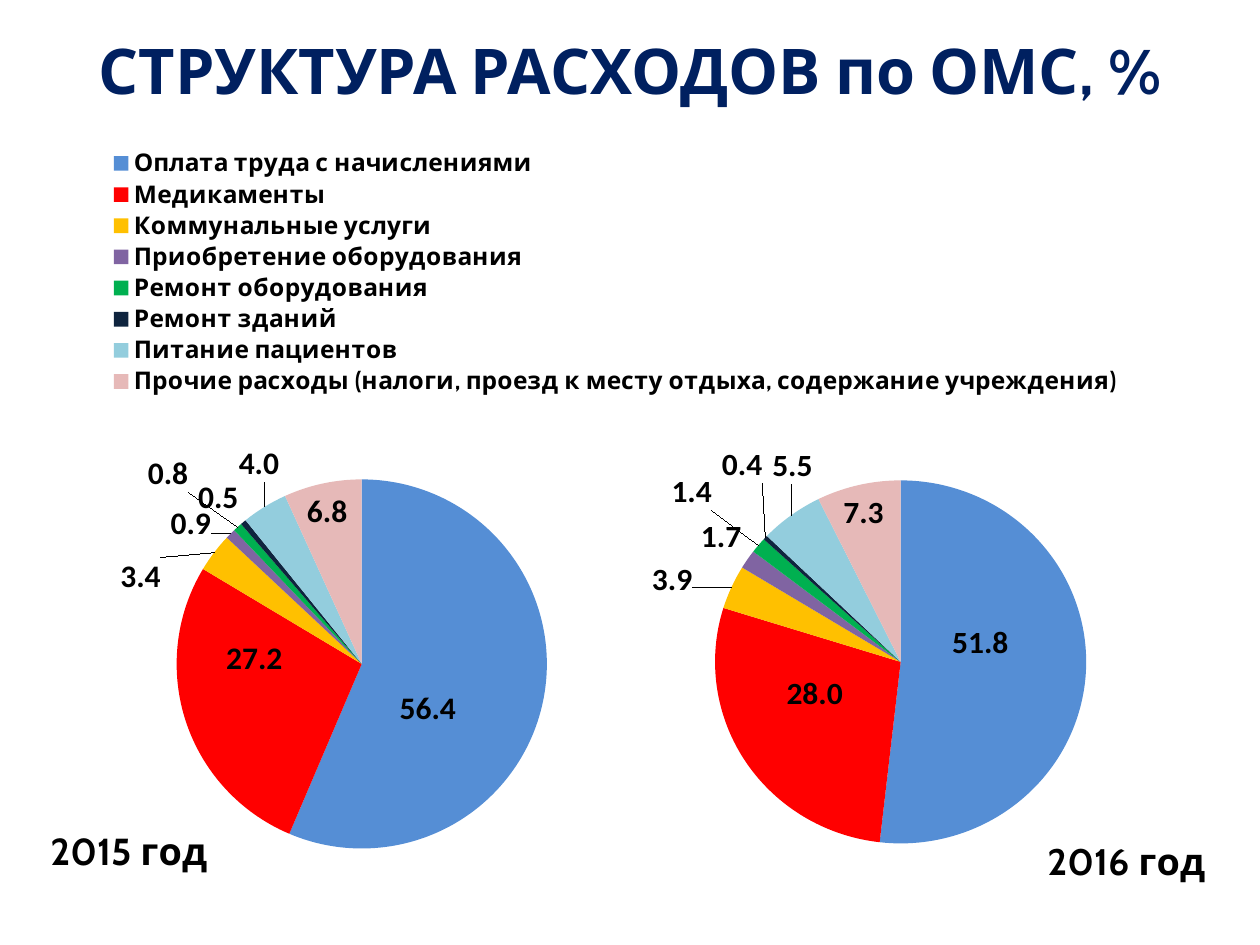
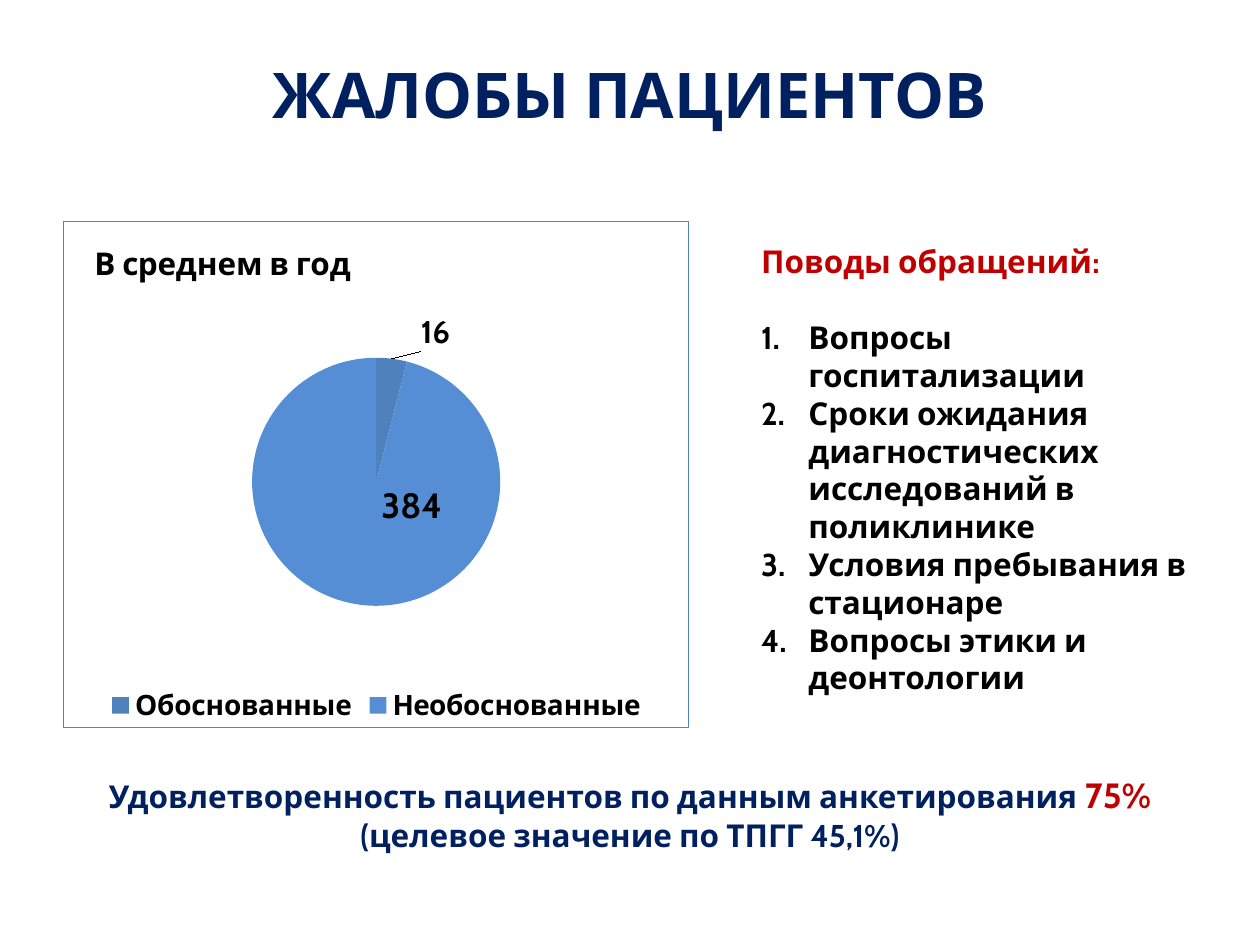
from math import cos, pi, sin

from lxml.etree import SubElement as sub
from pptx import Presentation
from pptx.chart.data import CategoryChartData as Data
from pptx.dml.color import RGBColor
from pptx.enum.chart import XL_CHART_TYPE as Kind
from pptx.enum.chart import XL_LABEL_POSITION as Spot
from pptx.enum.chart import XL_LEGEND_POSITION as Side
from pptx.enum.text import MSO_ANCHOR as Anchor
from pptx.enum.text import MSO_AUTO_SIZE as Fit
from pptx.enum.text import PP_ALIGN as Align
from pptx.oxml import parse_xml
from pptx.oxml.ns import nsdecls, qn
from pptx.util import Pt

FACE = "Cabin"
NAVY, RED, BLACK, BLUE = "002060", "C00000", "000000", "4F81BD"
SLICES = ["558ED5", "FF0000", "FFC000", "8064A2",
          "00B050", "0F243E", "93CDDD", "E6B9B8"]
COSTS = ["Оплата труда с начислениями", "Медикаменты", "Коммунальные услуги",
         "Приобретение оборудования", "Ремонт оборудования", "Ремонт зданий",
         "Питание пациентов",
         "Прочие расходы (налоги, проезд к месту отдыха, содержание учреждения)"]
REASONS = ["Вопросы госпитализации",
           "Сроки ожидания диагностических исследований в поликлинике",
           "Условия пребывания в стационаре",
           "Вопросы этики и деонтологии"]


def hue(code):
    """Turn a hex string into a colour."""
    return RGBColor.from_string(code)


def style(font, size, color=BLACK, face=FACE):
    """Set a bold font."""
    font.name, font.size, font.bold = face, Pt(size), True
    font.color.rgb = hue(color)


def write(para, text, size, color):
    """Add one styled run to a paragraph."""
    run = para.add_run()
    run.text = text
    style(run.font, size, color)


def move(shape, box):
    """Put a shape into a box given in points."""
    shape.left, shape.top, shape.width, shape.height = map(Pt, box)


def head(slide, text, box):
    """Fill and place the slide title."""
    title = slide.shapes.title
    move(title, box)
    frame = title.text_frame
    frame.auto_size, frame.vertical_anchor = Fit.NONE, Anchor.MIDDLE
    para = frame.paragraphs[0]
    para.alignment = Align.CENTER
    write(para, text, 36, NAVY)


def place(node, index, x, y, size=None, inner=False):
    """Give a chart part a manual layout in fractions of the chart."""
    for old in node.findall(qn("c:layout")):
        node.remove(old)
    layout = parse_xml(f"<c:layout {nsdecls('c')}><c:manualLayout/></c:layout>")
    marks = [("layoutTarget", "inner")] if inner else []
    if index == 0 or size or node.tag == qn("c:title"):
        marks += [("xMode", "edge"), ("yMode", "edge")]
    marks += [("x", f"{x:.3f}"), ("y", f"{y:.3f}")]
    if size:
        marks += [("w", str(size[0])), ("h", str(size[1]))]
    for tag, val in marks:
        sub(layout[0], qn("c:" + tag)).set("val", val)
    node.insert(index, layout)


def frame_chart(chart, color):
    """Clear the chart ground and draw its border, if any."""
    line = (f'<a:ln w="9525"><a:solidFill><a:srgbClr val="{color}"/>'
            "</a:solidFill></a:ln>" if color else "<a:ln><a:noFill/></a:ln>")
    look = parse_xml(f"<c:spPr {nsdecls('c', 'a')}><a:noFill/>{line}</c:spPr>")
    chart._chartSpace.find(qn("c:chart")).addnext(look)


def shift(box, plot, vals, index, spot):
    """Find the move from the outer label place to a wanted centre."""
    left, top, wide, high = box
    px, py, pw, ph = plot
    rad = min(pw * wide, ph * high) / 2 + 4
    turn = 2 * pi * (sum(vals[:index]) + vals[index] / 2) / sum(vals)
    dx, dy = sin(turn), -cos(turn)
    half = 16 if vals[index] >= 10 else 11
    x = left + (px + pw / 2) * wide + rad * dx + (half if dx > 0 else -half)
    y = top + (py + ph / 2) * high + rad * dy + (11 if dy > 0 else -11)
    return (spot[0] - x) / wide, (spot[1] - y) / high


def pie(slide, box, cats, vals, fills, plot, title, spots,
        texts=None, border=None):
    """Draw a pie with a placed title and value labels."""
    data = Data(number_format="0.0")
    data.categories = cats
    data.add_series(title[0] if texts else "Series 1", vals)
    chart = slide.shapes.add_chart(Kind.PIE, *map(Pt, box), data).chart
    chart.font.size, chart.font.name = Pt(18), "Calibri"
    chart.font.color.rgb = hue(BLACK)
    frame_chart(chart, border)
    chart.has_legend = False
    place(chart._chartSpace.chart.plotArea, 0, *plot[:2], plot[2:], True)

    name, size, x, y = title
    chart.has_title = True
    write(chart.chart_title.text_frame.paragraphs[0], name, size, BLACK)
    place(chart.chart_title._element, 1, x, y)

    row = chart.plots[0].series[0]
    tags = row.data_labels
    tags.show_value, tags.position = True, Spot.BEST_FIT
    tags.number_format, tags.number_format_is_linked = "0.0", False
    style(tags.font, 18, face="Calibri")
    for index, fill in enumerate(fills):
        paint = row.points[index].format.fill
        paint.solid()
        paint.fore_color.rgb = hue(fill)
    for index, spot in spots.items():
        tag = row.points[index].data_label
        if texts:
            write(tag.text_frame.paragraphs[0], *texts[index], BLACK)
        else:
            style(tag.font, 18, face="Calibri")
        tag.position = Spot.BEST_FIT
        node = tag._dLbl
        place(node, 1, *shift(box, plot, vals, index, spot))
        if not texts:
            node.insert(2, parse_xml(f"<c:numFmt {nsdecls('c')} "
                                     'formatCode="0.0" sourceLinked="0"/>'))
    return chart


def key(chart, side, size):
    """Add a legend in bold type."""
    chart.has_legend = True
    chart.legend.position = side
    chart.legend.include_in_layout = False
    style(chart.legend.font, size)
    return chart.legend


def list_reasons(body, box):
    """Write the numbered list under its red heading."""
    move(body, box)
    frame = body.text_frame
    frame.auto_size, frame.word_wrap = Fit.NONE, True
    for index, text in enumerate(["Поводы обращений:"] + REASONS):
        para = frame.add_paragraph() if index else frame.paragraphs[0]
        para.space_before = Pt(22 if index == 1 else 0)
        props = para._p.get_or_add_pPr()
        props.set("marL", str(Pt(27) if index else 0))
        props.set("indent", str(-Pt(27) if index else 0))
        if index:
            sub(props, qn("a:buFont")).set("typeface", "+mj-lt")
            sub(props, qn("a:buAutoNum")).set("type", "arabicPeriod")
        else:
            sub(props, qn("a:buNone"))
        write(para, text, 18, BLACK if index else RED)


def note(slide, box):
    """Add the centred closing lines."""
    frame = slide.shapes.add_textbox(*map(Pt, box)).text_frame
    frame.word_wrap = True
    lines = [[("Удовлетворенность пациентов по данным анкетирования ", 18, NAVY),
              ("75%", 20, RED)],
             [("(целевое значение по ТПГГ 45,1%)", 18, NAVY)]]
    for index, runs in enumerate(lines):
        para = frame.add_paragraph() if index else frame.paragraphs[0]
        para.alignment = Align.CENTER
        for run in runs:
            write(para, *run)


def costs(deck):
    """Build the slide that compares spending in two years."""
    slide = deck.slides.add_slide(deck.slide_layouts[5])
    head(slide, "СТРУКТУРА РАСХОДОВ по ОМС, %", (0, 11.5, 720, 56))
    chart = pie(slide, (11.5, 84.2, 667.4, 421.9), COSTS,
                [56.4, 27.2, 3.4, 0.9, 0.8, 0.5, 4, 6.8], SLICES,
                (0.134, 0.451, 0.317, 0.502), ("2015 год", 21.6, 0.02, 0.91),
                {0: (244, 406), 1: (146, 377), 4: (97, 271)})
    legend = key(chart, Side.TOP, 14)
    place(legend._element, 1, 0.06, 0, (0.9, 0.34))
    pie(slide, (354.2, 236.2, 343.4, 275.8), [str(n) for n in range(1, 9)],
        [51.8, 28, 3.9, 1.7, 1.4, 0.4, 5.5, 7.3], SLICES,
        (0.144, 0.142, 0.647, 0.769), ("2016 год", 21.6, 0.7, 0.88),
        {0: (560, 381), 1: (466, 400), 2: (385, 333),
         4: (396, 282), 5: (425, 266)})


def claims(deck):
    """Build the slide on patient complaints."""
    slide = deck.slides.add_slide(deck.slide_layouts[1])
    head(slide, "ЖАЛОБЫ ПАЦИЕНТОВ", (0, 21.6, 720, 63))
    chart = pie(slide, (36, 126, 358, 290), ["Обоснованные", "Необоснованные"],
                [4, 96], [BLUE, SLICES[0]], (0.3, 0.27, 0.4, 0.49),
                ("В среднем в год", 18, 0.04, 0.03),
                {0: (251.5, 190), 1: (237, 287.5)},
                [("16", 18), ("384", 20)], BLUE)
    key(chart, Side.BOTTOM, 16)
    list_reasons(slide.placeholders[1], (427.7, 134.6, 270, 269))
    note(slide, (0, 438.5, 720, 53))


def main():
    """Build and save the deck."""
    deck = Presentation()
    deck.slide_width, deck.slide_height = Pt(720), Pt(540)
    costs(deck)
    claims(deck)
    deck.save("out.pptx")


if __name__ == "__main__":
    main()
